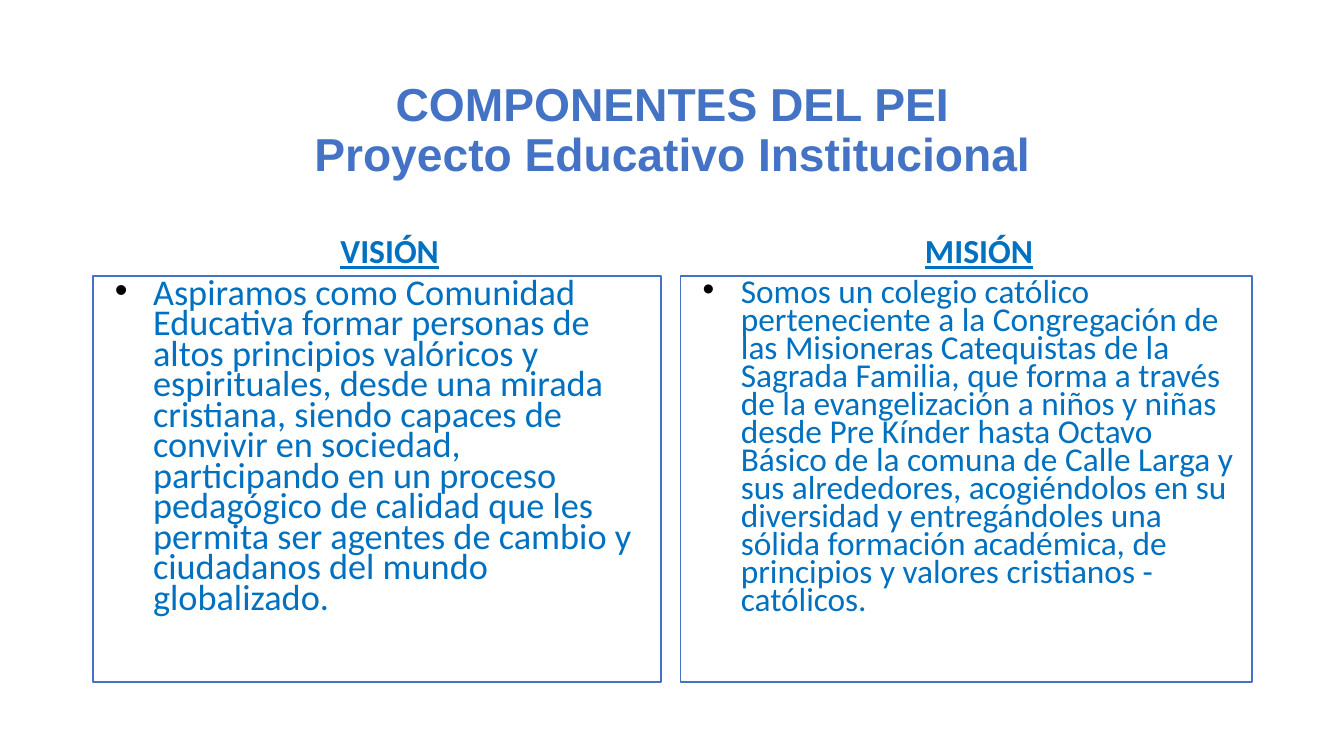
from dataclasses import dataclass

from lxml.etree import SubElement
from pptx import Presentation
from pptx.dml.color import RGBColor
from pptx.enum.shapes import MSO_SHAPE
from pptx.enum.text import MSO_ANCHOR, MSO_AUTO_SIZE, PP_ALIGN
from pptx.oxml.ns import qn
from pptx.util import Inches, Pt


@dataclass(frozen=True)
class Theme:
    accent: RGBColor = RGBColor(0x44, 0x72, 0xC4)
    text: RGBColor = RGBColor(0x00, 0x70, 0xC0)
    bullet: str = "000000"
    title_font: str = "Arial"
    body_font: str = "Calibri"
    title_size: float = 33
    heading_size: float = 24
    border_width: float = 1.25


def write_text(frame, text, *, font, size, color, bold=False, underline=False,
               align=PP_ALIGN.LEFT, anchor=MSO_ANCHOR.TOP, line_spacing=0.9,
               left_indent=0, first_indent=0, bullet_color=None):
    """Fill a text frame with one paragraph; a vertical tab breaks the line."""
    frame.word_wrap = True
    frame.auto_size = MSO_AUTO_SIZE.NONE
    frame.vertical_anchor = anchor
    frame.margin_left = frame.margin_right = Inches(0.1)
    frame.margin_top = frame.margin_bottom = Inches(0.05)
    para = frame.paragraphs[0]
    para.text = text
    properties = para._p.get_or_add_pPr()
    properties.set("marL", str(Inches(left_indent)))
    properties.set("indent", str(Inches(first_indent)))
    if bullet_color:
        color_tag = SubElement(properties, qn("a:buClr"))
        SubElement(color_tag, qn("a:srgbClr"), val=bullet_color)
        SubElement(properties, qn("a:buFont"), typeface="Arial")
        SubElement(properties, qn("a:buChar"), char="•")
    para.alignment = align
    para.line_spacing = line_spacing
    for span in para.runs:
        span.font.name = font
        span.font.size = Pt(size)
        span.font.color.rgb = color
        span.font.bold = bold
        span.font.underline = underline


class SlideBuilder:
    def __init__(self, deck, theme):
        self.theme = theme
        self.slide = deck.slides.add_slide(deck.slide_layouts[5])

    def title(self, text, left, top, width, height):
        title = self.slide.shapes.title
        title.left, title.top = Inches(left), Inches(top)
        title.width, title.height = Inches(width), Inches(height)
        write_text(title.text_frame, text, font=self.theme.title_font,
                   size=self.theme.title_size, color=self.theme.accent, bold=True,
                   align=PP_ALIGN.CENTER, anchor=MSO_ANCHOR.BOTTOM)

    def heading(self, text, left, top, width, height):
        box = self.slide.shapes.add_textbox(
            Inches(left), Inches(top), Inches(width), Inches(height))
        write_text(box.text_frame, text, font=self.theme.body_font,
                   size=self.theme.heading_size, color=self.theme.text,
                   bold=True, underline=True, align=PP_ALIGN.CENTER,
                   anchor=MSO_ANCHOR.BOTTOM, left_indent=0.5, first_indent=-0.25)

    def framed_bullet(self, text, size, left, top, width, height):
        box = self.slide.shapes.add_shape(
            MSO_SHAPE.RECTANGLE, Inches(left), Inches(top), Inches(width), Inches(height))
        box.shadow.inherit = False
        box.fill.background()
        box.line.color.rgb = self.theme.accent
        box.line.width = Pt(self.theme.border_width)
        write_text(box.text_frame, text, font=self.theme.body_font, size=size,
                   color=self.theme.text, line_spacing=0.7, left_indent=0.5,
                   first_indent=-0.38, bullet_color=self.theme.bullet)


VISION = (
    "Aspiramos como Comunidad Educativa formar personas de altos principios "
    "valóricos y espirituales, desde una mirada cristiana, siendo capaces de "
    "convivir en sociedad, participando en un proceso pedagógico de calidad que "
    "les permita ser agentes de cambio y ciudadanos del mundo globalizado."
)
MISSION = (
    "Somos un colegio católico perteneciente a la Congregación de las Misioneras "
    "Catequistas de la Sagrada Familia, que forma a través de la evangelización a "
    "niños y niñas desde Pre Kínder hasta Octavo Básico de la comuna de Calle Larga "
    "y sus alrededores, acogiéndolos en su diversidad y entregándoles una sólida "
    "formación académica, de principios y valores cristianos - católicos."
)
COLUMNS = [
    ("VISIÓN", VISION, 25.9, 0.92, 5.64),
    ("MISIÓN", MISSION, 23.8, 6.75, 5.67),
]


def main():
    deck = Presentation()
    deck.slide_width, deck.slide_height = Inches(13.33), Inches(7.5)
    page = SlideBuilder(deck, Theme())
    page.title("COMPONENTES DEL PEI\vProyecto Educativo Institucional",
               0.92, 0.4, 11.5, 1.45)
    for heading, statement, size, left, width in COLUMNS:
        page.heading(heading, left, 1.84, width, 0.9)
        page.framed_bullet(statement, size, left, 2.74, width, 4.03)
    deck.save("out.pptx")


if __name__ == "__main__":
    main()
